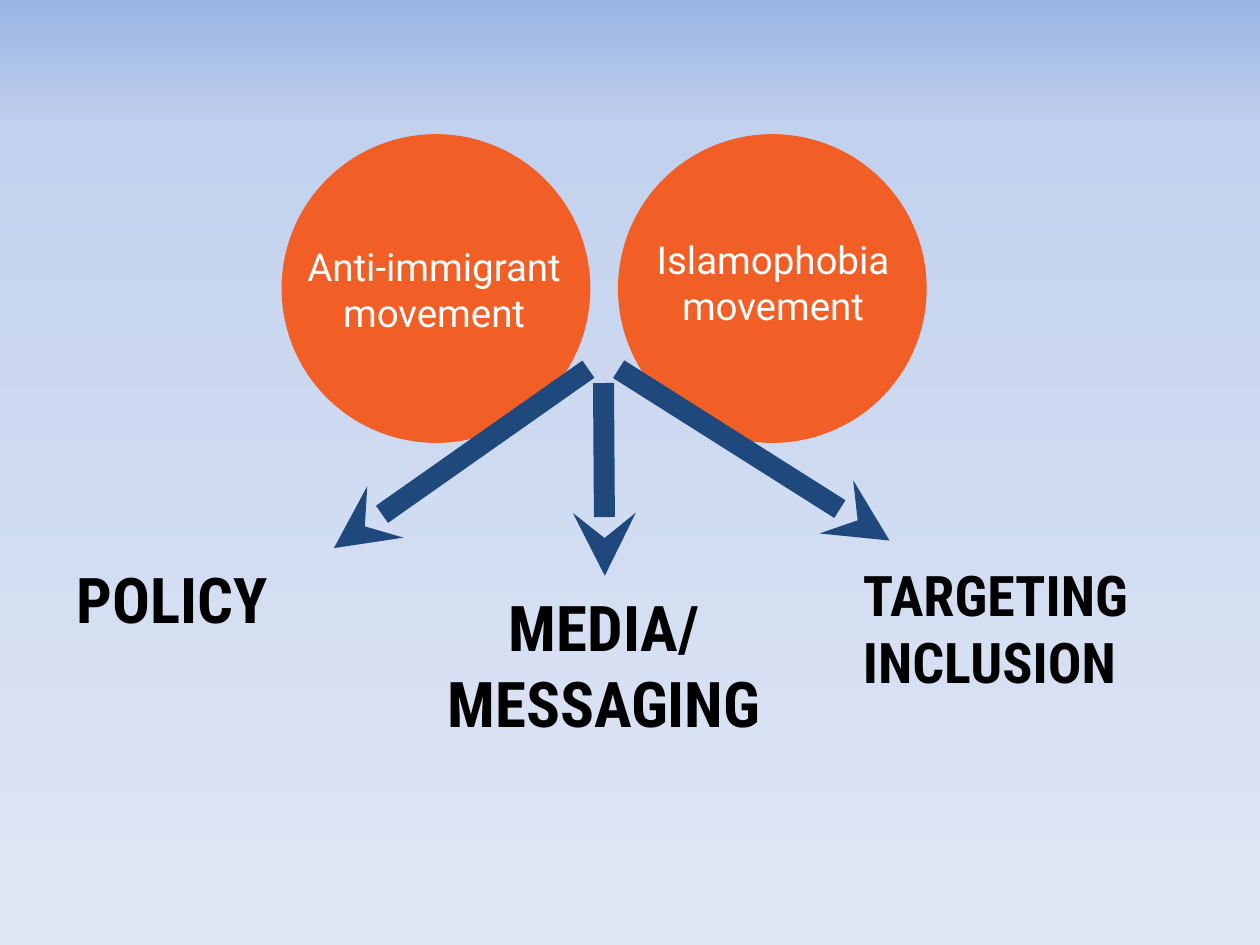
from dataclasses import dataclass

from lxml.etree import SubElement
from pptx import Presentation
from pptx.dml.color import RGBColor as Color
from pptx.enum.shapes import MSO_CONNECTOR as Connector, MSO_SHAPE as Shape
from pptx.enum.text import PP_ALIGN as Align
from pptx.oxml.ns import qn
from pptx.util import Inches, Pt


@dataclass(frozen=True)
class Theme:
    background: tuple = ((0, "9AB5E4"), (14, "C2D1ED"), (100, "E1E8F5"))
    circle: str = "F15F27"
    arrow: str = "1F497D"
    light: str = "FFFFFF"
    dark: str = "000000"
    label_font: str = "Roboto"
    outcome_font: str = "Roboto Condensed"
    label_size: int = 22
    outcome_size: int = 36
    small_outcome_size: int = 32
    outline: float = 0.75
    arrow_width: int = 12
    inset: float = 0.1


THEME = Theme()
COLUMNS, ROWS = 10, 7.5
CELL = Inches(1)


def grid(*cells):
    return [round(cell * CELL) for cell in cells]


def paint_background(page):
    fill = page.background.fill
    fill.gradient()
    fill.gradient_angle = 270
    stops = page.element.find(".//" + qn("a:gsLst"))
    for stop in list(stops):
        stops.remove(stop)
    for percent, color in THEME.background:
        stop = SubElement(stops, qn("a:gs"), pos=str(percent * 1000))
        SubElement(stop, qn("a:srgbClr"), val=color)


def add_text(shapes, box, text, font, size, color, align, bold=False):
    frame = shapes.add_textbox(*grid(*box)).text_frame
    frame.word_wrap = True
    frame.margin_left = frame.margin_right = Inches(THEME.inset)
    frame.margin_top = frame.margin_bottom = Inches(THEME.inset)
    frame.text = text
    for para in frame.paragraphs:
        para.alignment = align
        for span in para.runs:
            span.font.name = font
            span.font.size = Pt(size)
            span.font.bold = bold
            span.font.color.rgb = Color.from_string(color)


def add_movement(page, box, text, label_offset):
    left, top, width, height = box
    across, down = label_offset
    shapes = page.shapes.add_group_shape().shapes
    circle = shapes.add_shape(Shape.OVAL, *grid(*box))
    circle.shadow.inherit = False
    circle.fill.solid()
    circle.fill.fore_color.rgb = Color.from_string(THEME.circle)
    circle.line.color.rgb = Color.from_string(THEME.circle)
    circle.line.width = Pt(THEME.outline)
    label_box = (left + across, top + down, 2.25, 1.04)
    add_text(shapes, label_box, text, THEME.label_font, THEME.label_size,
             THEME.light, Align.CENTER)


def add_arrow(page, start, end):
    arrow = page.shapes.add_connector(Connector.STRAIGHT, *grid(*start, *end))
    arrow.line.color.rgb = Color.from_string(THEME.arrow)
    arrow.line.width = Pt(THEME.arrow_width)
    SubElement(arrow.line._get_or_add_ln(), qn("a:tailEnd"), type="stealth")
    SubElement(arrow.element.spPr, qn("a:effectLst"))


def add_outcome(page, box, text, size, align):
    add_text(page.shapes, box, text, THEME.outcome_font, size,
             THEME.dark, align, bold=True)


def build_slide(page):
    paint_background(page)
    diameter, circle_top = 2.44, 1.07
    movements = (
        (2.24, "Anti-immigrant movement", (0.08, 0.76)),
        (4.91, "Islamophobia movement", (0.1, 0.7)),
    )
    for left, text, label_offset in movements:
        add_movement(page, (left, circle_top, diameter, diameter), text, label_offset)

    arrows = (
        ((4.67, 2.93), (2.65, 4.35)),
        ((4.79, 3.04), (4.8, 4.57)),
        ((4.91, 2.93), (7.06, 4.29)),
    )
    for start, end in arrows:
        add_arrow(page, start, end)

    large, small = THEME.outcome_size, THEME.small_outcome_size
    outcomes = (
        ((0.51, 4.35, 2.15, 0.78), "POLICY", large, Align.LEFT),
        ((3.08, 4.57, 3.43, 1.59), "MEDIA/\nMESSAGING", large, Align.CENTER),
        ((6.75, 4.35, 3.22, 1.36), "TARGETING INCLUSION", small, Align.LEFT),
    )
    for outcome in outcomes:
        add_outcome(page, *outcome)


def main():
    deck = Presentation()
    deck.slide_width, deck.slide_height = grid(COLUMNS, ROWS)
    blank_layout = deck.slide_layouts[6]
    build_slide(deck.slides.add_slide(blank_layout))
    deck.save("out.pptx")


if __name__ == "__main__":
    main()
